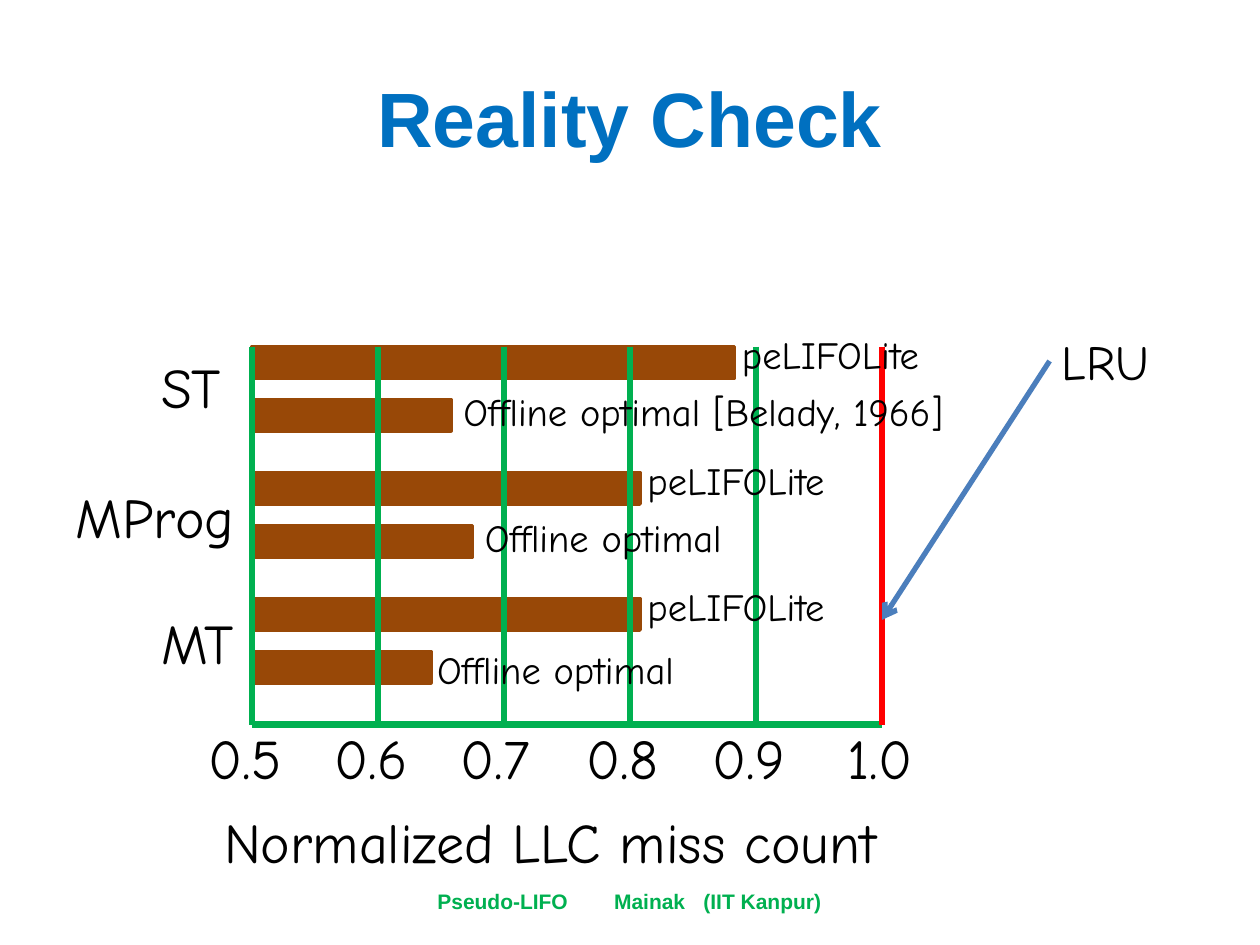
from lxml.etree import SubElement
from pptx import Presentation
from pptx.dml.color import RGBColor
from pptx.enum.shapes import MSO_CONNECTOR, MSO_SHAPE
from pptx.enum.text import MSO_ANCHOR, MSO_AUTO_SIZE, PP_ALIGN
from pptx.oxml.ns import qn
from pptx.util import Inches, Pt

COLORS = {
    "title": "0070C0",
    "green": "00B050",
    "bar": "984807",
    "lru": "FF0000",
    "arrow": "4B7EBC",
    "text": "000000",
}
HEAD_FONT = "Arial"
HAND_FONT = "Comic Neue"

GROUPS = [
    ("ST", -0.82, 0, 0.82, [
        (3.83, "peLIFOLite", 3.79, -0.17, 1.88),
        (1.58, "Offline optimal [Belady, 1966]", 1.58, -0.14, 4.55),
    ]),
    ("MProg", -1.5, 0.03, 1.52, [
        (3.08, "peLIFOLite", 3.04, -0.17, 1.88),
        (1.75, "Offline optimal", 1.75, -0.14, 2.49),
    ]),
    ("MT", -0.82, 0.03, 0.9, [
        (3.08, "peLIFOLite", 3.04, -0.17, 1.88),
        (1.42, "Offline optimal", 1.37, -0.09, 2.49),
    ]),
]
BAR_STEP = 0.42
TICKS = ["0.5", "0.6", "0.7", "0.8", "0.9", "1.0"]
LABEL_HEIGHTS = {22: 0.47, 28: 0.57, 32: 0.64}


def rgb(name):
    return RGBColor.from_string(COLORS[name])


def add_text(s, text, box, size=32, font=HAND_FONT, color="text", bold=False,
             align=PP_ALIGN.LEFT, anchor=MSO_ANCHOR.TOP, wrap=False, gaps=()):
    sp = s.shapes.add_textbox(*map(Inches, box))
    tf = sp.text_frame
    tf.word_wrap = wrap
    tf.auto_size = MSO_AUTO_SIZE.NONE if wrap else MSO_AUTO_SIZE.SHAPE_TO_FIT_TEXT
    tf.vertical_anchor = anchor
    p = tf.paragraphs[0]
    p.alignment = align
    parts = [text] if isinstance(text, str) else text
    pieces = [(parts[0], 0)]
    for part, gap in zip(parts[1:], gaps):
        pieces += [(" ", gap), (part, 0)]
    for piece, spacing in pieces:
        r = p.add_run()
        r.text = piece
        r.font.size = Pt(size)
        r.font.name = font
        r.font.bold = bold
        r.font.color.rgb = rgb(color)
        if spacing:
            r.font._element.set("spc", str(spacing * 100))
    return sp


def add_label(s, text, x, y, width, size=32):
    return add_text(s, text, (x, y, width, LABEL_HEIGHTS[size]), size=size)


def add_line(s, x1, y1, x2, y2, color="green", width=4, arrow=False):
    line = s.shapes.add_connector(MSO_CONNECTOR.STRAIGHT, *map(Inches, (x1, y1, x2, y2)))
    line.line.color.rgb = rgb(color)
    line.line.width = Pt(width)
    if arrow:
        SubElement(line.line._get_or_add_ln(), qn("a:tailEnd"), type="arrow")
    SubElement(line._element.spPr, qn("a:effectLst"))
    return line


def add_bar(s, x, y, width, height):
    sp = s.shapes.add_shape(MSO_SHAPE.RECTANGLE, *map(Inches, (x, y, width, height)))
    sp.shadow.inherit = False
    sp.fill.solid()
    sp.fill.fore_color.rgb = rgb("bar")
    sp.line.color.rgb = rgb("bar")
    sp.line.width = Pt(2)


def add_title(s, box):
    add_text(s, "Reality Check", box, size=44, font=HEAD_FONT, color="title", bold=True,
             align=PP_ALIGN.CENTER, anchor=MSO_ANCHOR.MIDDLE, wrap=True)


def add_footer(s, box):
    add_text(s, ["Pseudo-LIFO", "Mainak", "(IIT Kanpur)"], box, size=12, font=HEAD_FONT,
             color="green", bold=True, align=PP_ALIGN.CENTER, anchor=MSO_ANCHOR.MIDDLE,
             wrap=True, gaps=(23, 7))


def add_bars(s, x, y, pitch):
    for i, (*_, bars) in enumerate(GROUPS):
        for j, (length, *_) in enumerate(bars):
            add_bar(s, x, y + i * pitch + j * BAR_STEP, length, 0.25)


def add_grid(s, x, y, width, height):
    step = width / (len(TICKS) - 1)
    for i in range(len(TICKS)):
        color = "lru" if i == len(TICKS) - 1 else "green"
        add_line(s, x + i * step, y, x + i * step, y + height, color=color)
    for i, tick in enumerate(TICKS):
        shift, label_width = (-0.37, 0.79) if tick == "1.0" else (-0.44, 0.86)
        add_label(s, tick, x + i * step + shift, y + height - 0.06, label_width)


def add_bar_labels(s, x, y, pitch):
    for i, (name, name_dx, name_dy, name_width, bars) in enumerate(GROUPS):
        top = y + i * pitch
        for j, (_, text, dx, dy, width) in enumerate(bars):
            add_label(s, text, x + dx, top + j * BAR_STEP + dy, width, size=22)
        add_label(s, name, x + name_dx, top + name_dy, name_width)


def add_lru_callout(s, x, y, width, height):
    right = x + width
    label = add_label(s, "LRU", right + 1.33, y - 0.17, 0.95, size=28)
    arrow = add_line(s, right + 1.33, y + 0.12, right, y + height - 0.83,
                     color="arrow", width=3, arrow=True)
    arrow.begin_connect(label, 1)


def add_miss_plot(s, box):
    x, y, width, height = box
    pitch = height / len(GROUPS)
    add_line(s, x, y + height, x + width, y + height)
    add_bars(s, x, y, pitch)
    add_grid(s, *box)
    add_lru_callout(s, *box)
    add_bar_labels(s, x, y, pitch)
    add_label(s, "Normalized LLC miss count", x - 0.32, y + height + 0.61, 5.82)


def main():
    prs = Presentation()
    prs.slide_width = Inches(10)
    prs.slide_height = Inches(7.5)
    s = prs.slides.add_slide(prs.slide_layouts[6])
    add_title(s, (0, 0.3, 10, 1.25))
    add_footer(s, (2.83, 6.95, 4.33, 0.4))
    add_miss_plot(s, (2, 2.75, 5, 3))
    prs.save("out.pptx")


if __name__ == "__main__":
    main()
